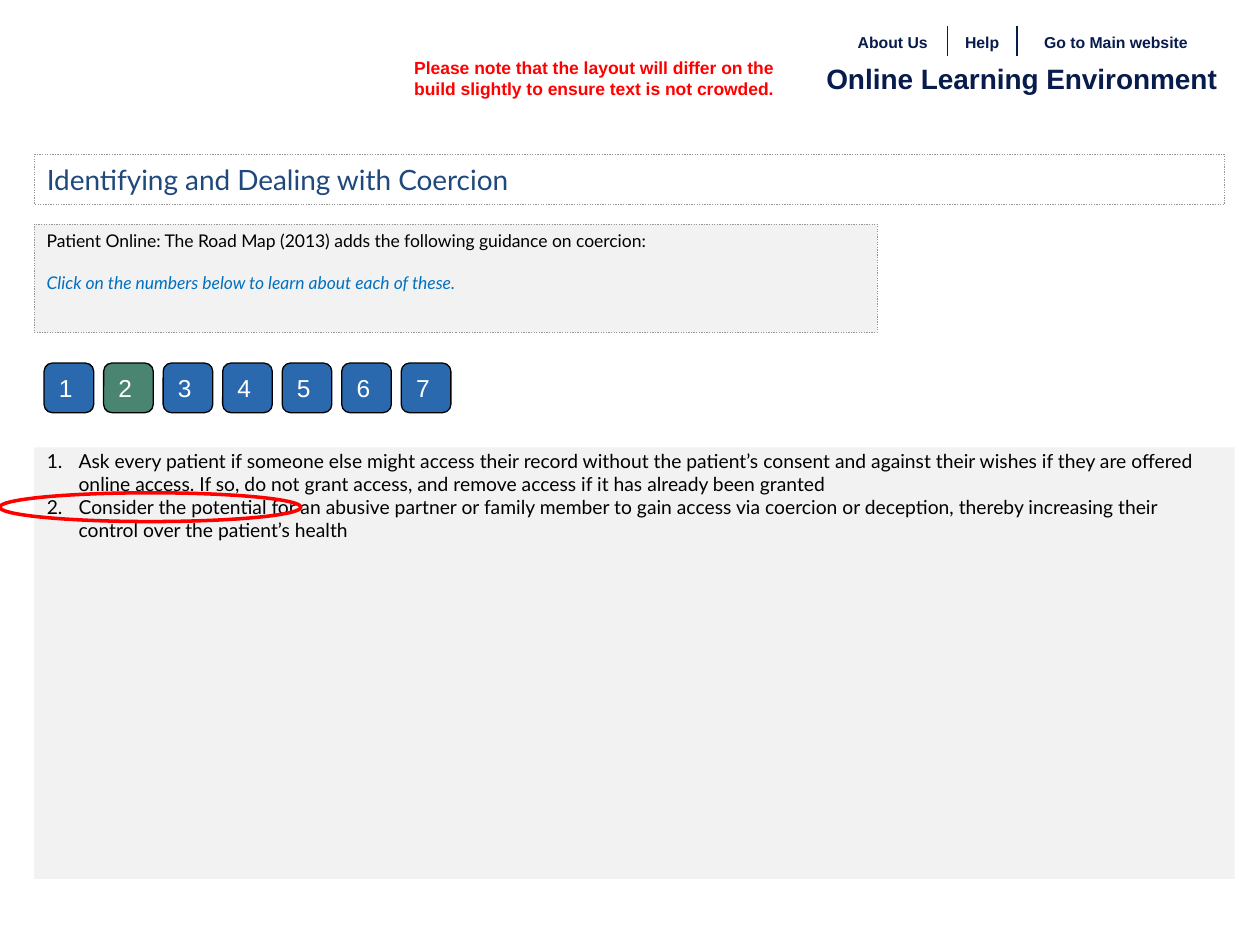
import pptx
import pptx.dml.color
import pptx.enum.dml
import pptx.enum.shapes
import pptx.enum.text
import pptx.util
from lxml import etree
from pptx.util import Cm, Pt

COLOURS = {
    "navy": "071B4D",
    "title": "1F497D",
    "hint": "0070C0",
    "alert": "FF0000",
    "panel": "F2F2F2",
    "border": "969696",
    "button": "2B69AE",
    "current": "498571",
    "black": "000000",
    "white": "FFFFFF",
}
SHAPES = pptx.enum.shapes.MSO_SHAPE
ANCHOR = pptx.enum.text.MSO_ANCHOR
ALIGN = pptx.enum.text.PP_ALIGN
DRAWING_NS = "http://schemas.openxmlformats.org/drawingml/2006/main"


def rgb(name):
    return pptx.dml.color.RGBColor.from_string(COLOURS[name])


def style_text(paragraph, font, size, colour, bold=False, italic=False, align=ALIGN.LEFT):
    paragraph.alignment = align
    for run in paragraph.runs:
        run.font.name = font
        run.font.size = Pt(size)
        run.font.color.rgb = rgb(colour)
        run.font.bold = bold
        run.font.italic = italic


def set_outline(shape, colour, width, dash=None):
    shape.line.color.rgb = rgb(colour)
    shape.line.width = Pt(width)
    if dash:
        shape.line.dash_style = dash


def place(shape, box):
    shape.left, shape.top, shape.width, shape.height = [Cm(length) for length in box]


def add_box(slide, kind, box, fill=None):
    shape = slide.shapes.add_shape(kind, *[Cm(length) for length in box])
    shape.shadow.inherit = False
    if fill:
        shape.fill.solid()
        shape.fill.fore_color.rgb = rgb(fill)
    else:
        shape.fill.background()
    return shape


def add_label(slide, box, text, size, colour, align):
    label = slide.shapes.add_textbox(*[Cm(length) for length in box])
    label.text_frame.word_wrap = True
    label.text_frame.text = text
    style_text(label.text_frame.paragraphs[0], "Arial", size, colour, bold=True, align=align)


def add_site_header(slide, box):
    left, top, width, height = box
    # Navigation links with dividers between them
    link_left = left + 0.79
    links = [("About Us", 2.21), ("Help", 1.4), ("Go to Main website", 3.99)]
    for index, (link, link_width) in enumerate(links):
        if index:
            divider = slide.shapes.add_connector(
                pptx.enum.shapes.MSO_CONNECTOR.STRAIGHT,
                Cm(link_left), Cm(top), Cm(link_left), Cm(top + 0.6))
            set_outline(divider, "navy", 1)
            etree.SubElement(divider.element.spPr, f"{{{DRAWING_NS}}}effectLst")
        add_label(slide, (link_left, top, link_width, 0.64), link, 9, "navy", ALIGN.CENTER)
        link_left += link_width
    # Site name
    add_label(slide, (left, top + 0.59, width, height - 0.59),
              "Online Learning Environment", 16, "navy", ALIGN.CENTER)


def fill_title(slide, box):
    title = slide.shapes.title
    place(title, box)
    set_outline(title, "border", 0.75, pptx.enum.dml.MSO_LINE.ROUND_DOT)
    frame = title.text_frame
    frame.text = "Identifying and Dealing with Coercion"
    frame.auto_size = pptx.enum.text.MSO_AUTO_SIZE.NONE
    frame.vertical_anchor = ANCHOR.MIDDLE
    style_text(frame.paragraphs[0], "Lato", 16, "title")


def add_introduction(slide, box):
    introduction = add_box(slide, SHAPES.RECTANGLE, box, "panel")
    set_outline(introduction, "border", 0.75, pptx.enum.dml.MSO_LINE.ROUND_DOT)
    frame = introduction.text_frame
    frame.vertical_anchor = ANCHOR.TOP
    frame.text = "Patient Online: The Road Map (2013) adds the following guidance on coercion:"
    style_text(frame.paragraphs[0], "Lato", 10, "black")
    hint = frame.add_paragraph()
    hint.text = "Click on the numbers below to learn about each of these."
    hint.space_before = Pt(12)
    style_text(hint, "Lato", 10, "hint", italic=True)


def add_number_buttons(slide, box, count, current):
    left, top, width, size = box
    pitch = (width - size) / (count - 1)
    for number in range(1, count + 1):
        fill = "current" if number == current else "button"
        button = add_box(slide, SHAPES.ROUNDED_RECTANGLE,
                         (left + (number - 1) * pitch, top, size, size), fill)
        set_outline(button, "black", 0.75)
        button.text_frame.text = str(number)
        button.text_frame.vertical_anchor = ANCHOR.MIDDLE
        style_text(button.text_frame.paragraphs[0], "Arial", 14, "white")


def fill_guidance(slide, box):
    left, top, width, height = box
    guidance = slide.placeholders[1]
    place(guidance, (left, top - 0.1, width, 2.62))
    # Grey panel behind the list
    panel = add_box(slide, SHAPES.RECTANGLE, box, "panel")
    panel.line.fill.background()
    guidance.element.addprevious(panel.element)
    # Numbered list
    steps = [
        "Ask every patient if someone else might access their record without the patient’s "
        "consent and against their wishes if they are offered online access. If so, do not "
        "grant access, and remove access if it has already been granted",
        "Consider the potential for an abusive partner or family member to gain access via "
        "coercion or deception, thereby increasing their control over the patient’s health",
    ]
    frame = guidance.text_frame
    frame.text = "\n".join(steps)
    frame.auto_size = pptx.enum.text.MSO_AUTO_SIZE.NONE
    for step in frame.paragraphs:
        step.space_before = Pt(0)
        properties = step._p.get_or_add_pPr()
        properties.set("marL", str(Cm(0.64)))
        properties.set("indent", str(-Cm(0.64)))
        etree.SubElement(properties, f"{{{DRAWING_NS}}}buFont", typeface="+mj-lt")
        etree.SubElement(properties, f"{{{DRAWING_NS}}}buAutoNum", type="arabicPeriod")
        style_text(step, "Lato", 11, "black")


def add_highlight(slide, box):
    ring = add_box(slide, SHAPES.OVAL, box)
    ring.rotation = 90
    set_outline(ring, "alert", 2)


def main():
    deck = pptx.Presentation()
    deck.slide_width, deck.slide_height = Cm(25.4), Cm(19.05)
    slide = deck.slides.add_slide(deck.slide_layouts[1])

    add_site_header(slide, (16.1, 0.53, 9, 1.53))
    fill_title(slide, (0.69, 3.12, 24, 1))
    add_introduction(slide, (0.69, 4.52, 17, 2.18))
    fill_guidance(slide, (0.69, 9.02, 24.2, 8.7))
    add_number_buttons(slide, (0.89, 7.32, 8.2, 1), count=7, current=2)
    add_label(slide, (8.1, 1.02, 8.4, 1.12),
              "Please note that the layout will differ on the build slightly "
              "to ensure text is not crowded.", 10, "alert", ALIGN.LEFT)
    add_highlight(slide, (2.74, 7.19, 0.58, 6.07))

    deck.save("out.pptx")


if __name__ == "__main__":
    main()
